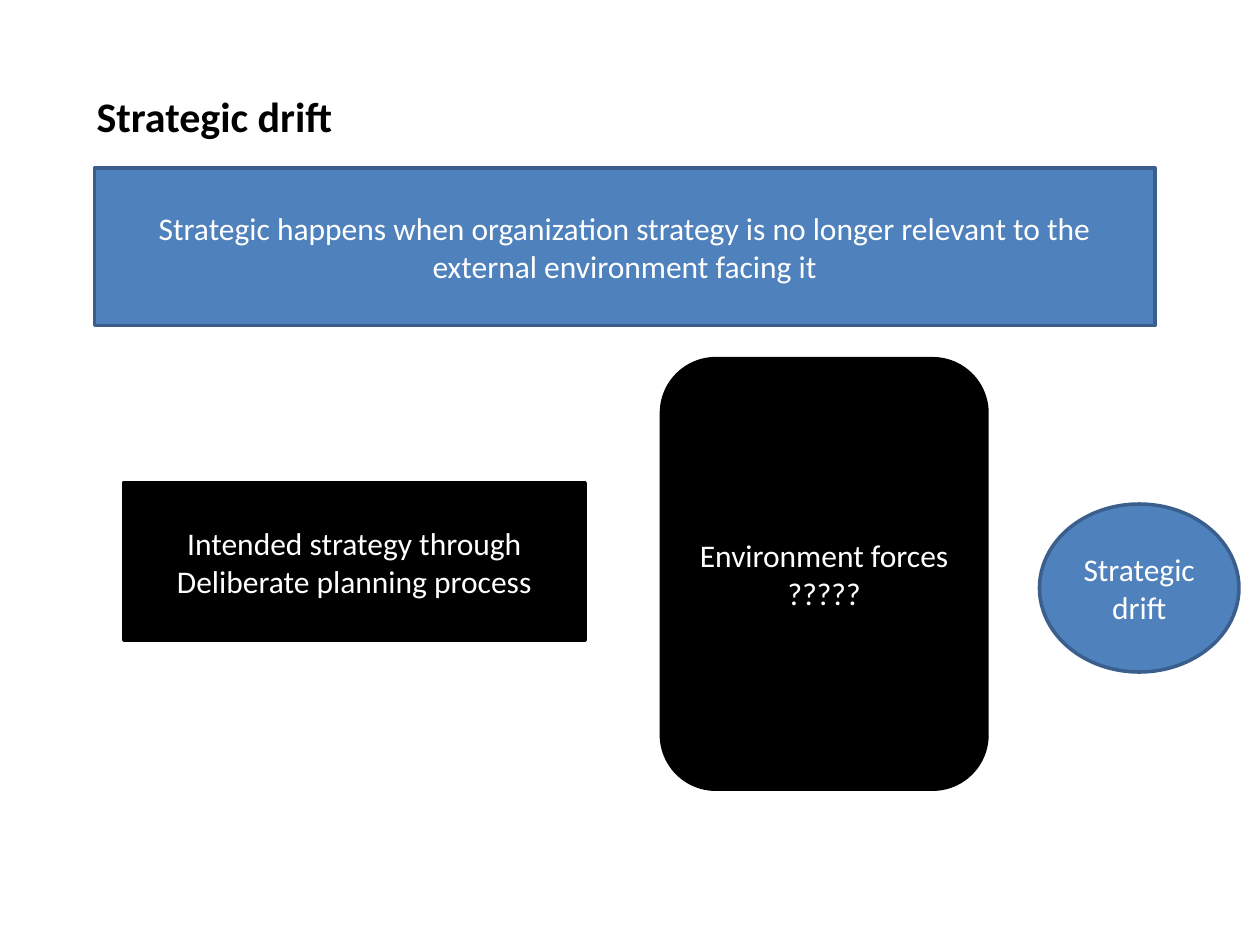
from dataclasses import dataclass

from pptx import Presentation
from pptx.dml.color import RGBColor
from pptx.enum.shapes import MSO_SHAPE as Shape
from pptx.enum.text import MSO_ANCHOR as Anchor, PP_ALIGN as Align
from pptx.slide import Slide
from pptx.util import Pt

BLUE = RGBColor(0x4F, 0x81, 0xBD)
DARK_BLUE = RGBColor(0x3A, 0x5F, 0x8C)
BLACK = RGBColor(0, 0, 0)
WHITE = RGBColor(255, 255, 255)
FONT = "Calibri"


@dataclass
class Box:
    kind: Shape
    left: float
    top: float
    width: float
    height: float
    fill: RGBColor
    line: RGBColor
    lines: tuple[str, ...]


BOXES = [
    Box(Shape.RECTANGLE, 54, 96, 606, 90, BLUE, DARK_BLUE,
        ("Strategic happens when organization strategy is no longer "
         "relevant to the external environment facing it",)),
    Box(Shape.RECTANGLE, 70.5, 276, 264, 90, BLACK, BLACK,
        ("Intended strategy through Deliberate planning process",)),
    Box(Shape.ROUNDED_RECTANGLE, 378, 205, 186, 246, BLACK, BLACK,
        ("Environment forces", "?????")),
    Box(Shape.OVAL, 594, 288, 114, 96, BLUE, DARK_BLUE,
        ("Strategic drift",)),
]


def add_title(s: Slide, text: str) -> None:
    title = s.shapes.title
    title.left, title.top, title.width, title.height = Pt(48), Pt(48), Pt(588), Pt(36)
    tf = title.text_frame
    tf.text = text
    tf.vertical_anchor = Anchor.MIDDLE
    p = tf.paragraphs[0]
    p.alignment = Align.LEFT
    p.font.name = FONT
    p.font.size = Pt(24)
    p.font.bold = True
    p.font.color.rgb = BLACK


def add_box(s: Slide, box: Box) -> None:
    sp = s.shapes.add_shape(box.kind, Pt(box.left), Pt(box.top),
                            Pt(box.width), Pt(box.height))
    sp.shadow.inherit = False
    sp.fill.solid()
    sp.fill.fore_color.rgb = box.fill
    sp.line.color.rgb = box.line
    sp.line.width = Pt(2)
    tf = sp.text_frame
    tf.word_wrap = True
    tf.vertical_anchor = Anchor.MIDDLE
    tf.text = "\n".join(box.lines)
    for p in tf.paragraphs:
        p.alignment = Align.CENTER
        p.font.name = FONT
        p.font.size = Pt(18)
        p.font.color.rgb = WHITE


def main() -> None:
    prs = Presentation()
    prs.slide_width, prs.slide_height = Pt(720), Pt(540)
    s = prs.slides.add_slide(prs.slide_layouts[5])
    add_title(s, "Strategic drift")
    for box in BOXES:
        add_box(s, box)
    prs.save("out.pptx")


if __name__ == "__main__":
    main()
